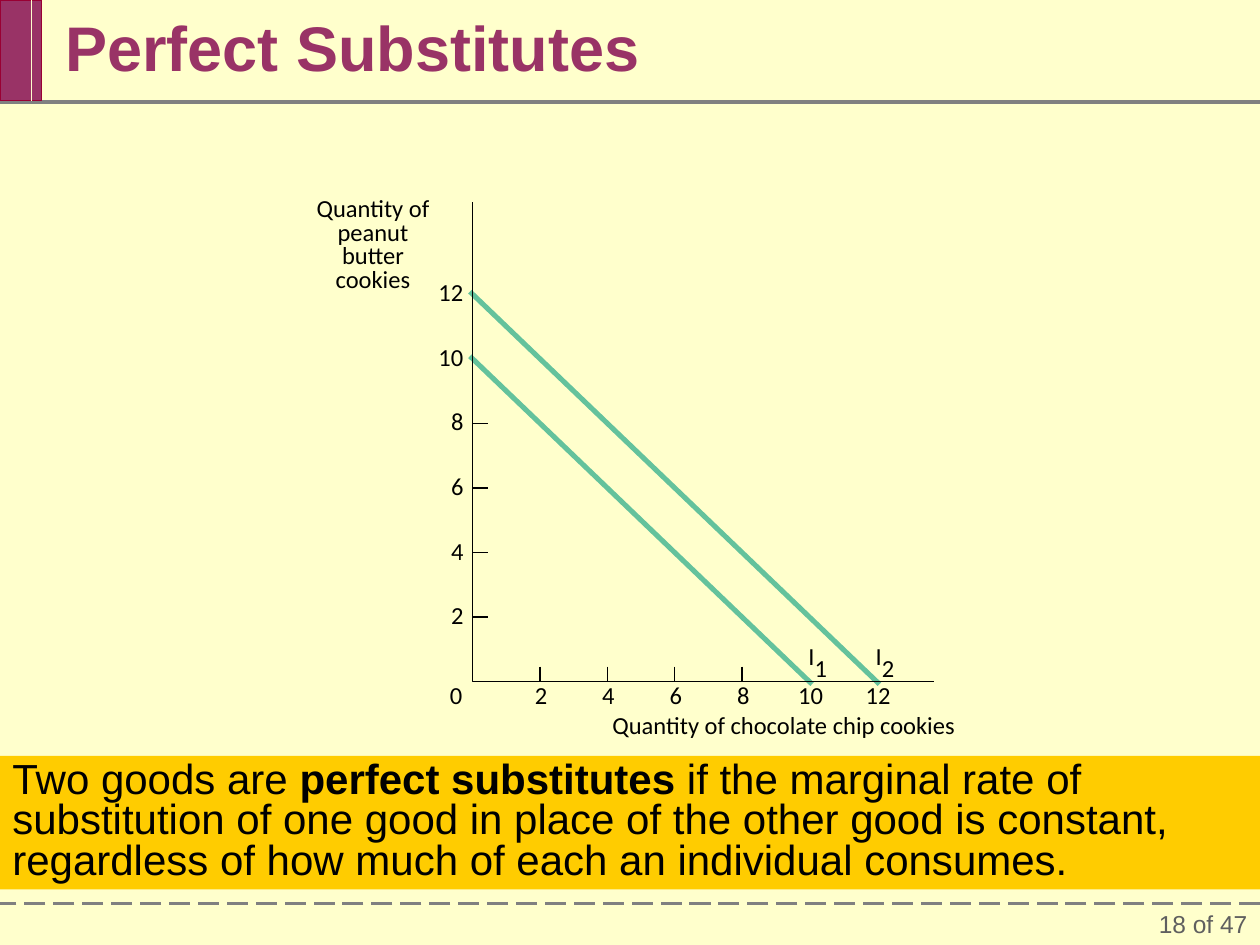
import pptx
import pptx.util
import pptx.dml.color
import pptx.enum.dml
import pptx.enum.shapes
import pptx.enum.text
import pptx.oxml.ns
import lxml.etree

TITLE = "Perfect Substitutes"
PAGE = "18 of 47"
X_TITLE = "Quantity of chocolate chip cookies"
Y_TITLE = "Quantity of peanut butter cookies"
DEFINITION = [
    ("Two goods are ", False),
    ("perfect substitutes ", True),
    ("if the marginal rate of substitution of one good in place of the other "
     "good is constant, regardless of how much of each an individual consumes.", False),
]
TICKS = [2, 4, 6, 8]
CURVES = [("I", "1", 10), ("I", "2", 12)]
COLORS = {
    "paper": "FFFFCC", "plum": "993366", "edge": "990033", "gray": "808080",
    "page": "5F5F5F", "ink": "000000", "curve": "64C29C", "band": "FFCC00",
}

W, H = 10, 7.5
X0, Y0 = 3.75, 5.41
X_END, Y_END = 7.41, 1.6
DX, DY = 2.14 / 8, 2.05 / 8
TICK = 0.12
DIGIT, LABEL_H = 0.1, 0.19
OVERHANG = 0.02

Inches, Pt = pptx.util.Inches, pptx.util.Pt
PP_ALIGN = pptx.enum.text.PP_ALIGN
ANCHOR = pptx.enum.text.MSO_ANCHOR
DASH = pptx.enum.dml.MSO_LINE

prs = pptx.Presentation()
prs.slide_width, prs.slide_height = Inches(W), Inches(H)
s = prs.slides.add_slide(prs.slide_layouts[6])


def rgb(name):
    return pptx.dml.color.RGBColor.from_string(COLORS[name])


s.background.fill.solid()
s.background.fill.fore_color.rgb = rgb("paper")


def x_at(v):
    return X0 + v * DX


def y_at(v):
    return Y0 - v * DY


def line(x1, y1, x2, y2, color="ink", width=0.75, dash=None):
    c = s.shapes.add_connector(pptx.enum.shapes.MSO_CONNECTOR.STRAIGHT,
                               Inches(x1), Inches(y1), Inches(x2), Inches(y2))
    c.line.color.rgb, c.line.width = rgb(color), Pt(width)
    if dash:
        c.line.dash_style = dash
    lxml.etree.SubElement(c._element.spPr, pptx.oxml.ns.qn("a:effectLst"))


def rect(x, y, w, h, fill, edge=None):
    sp = s.shapes.add_shape(pptx.enum.shapes.MSO_SHAPE.RECTANGLE,
                            Inches(x), Inches(y), Inches(w), Inches(h))
    sp.shadow.inherit = False
    sp.fill.solid()
    sp.fill.fore_color.rgb = rgb(fill)
    if edge:
        sp.line.color.rgb, sp.line.width = rgb(edge), Pt(0.75)
    else:
        sp.line.fill.background()
    return sp


def write(sp, runs, size, font, color="ink", align=PP_ALIGN.LEFT, spacing=None,
          anchor=ANCHOR.TOP, wrap=True):
    tf = sp.text_frame
    tf.word_wrap, tf.vertical_anchor = wrap, anchor
    p = tf.paragraphs[0]
    p.alignment, p.line_spacing = align, spacing
    p.font.size, p.font.name, p.font.color.rgb = Pt(size), font, rgb(color)
    for text, bold in runs:
        r = p.add_run()
        r.text, r.font.bold = text, bold
    return tf


def box(x, y, w, h):
    return s.shapes.add_textbox(Inches(x), Inches(y), Inches(w), Inches(h))


def label(text, x, y, w, h=LABEL_H, align=PP_ALIGN.LEFT, wrap=False):
    tf = write(box(x, y, w, h), [(text, False)], 14, "Calibri",
               align=align, spacing=0.8, wrap=wrap)
    tf.margin_left = tf.margin_right = tf.margin_top = tf.margin_bottom = 0


write(box(8.5, 7.17, 1.5, 0.33), [(PAGE, False)], 14, "Arial", "page",
      PP_ALIGN.RIGHT, anchor=ANCHOR.MIDDLE)
line(W, 7.17, 0, 7.17, "gray", 1.5, DASH.LONG_DASH)
line(W, 0.81, 0, 0.81, "gray", 2)
rect(0, 0, 0.33, 0.8, "plum", "edge")
line(0.25, 0, 0.25, 0.8, "paper")

label("0", 3.57, Y0 + 0.03, DIGIT)
for v in TICKS + [v for _, _, v in CURVES]:
    w = DIGIT * len(str(v))
    label(str(v), x_at(v) - w / 2 + 0.01, Y0 + 0.03, w)
    label(str(v), X0 - 0.07 - w, y_at(v) - 0.09, w)
for v in TICKS:
    line(x_at(v), Y0 - TICK, x_at(v), Y0)
    line(X0, y_at(v), X0 + TICK, y_at(v))

label(X_TITLE, 4.86, 5.68, 2.79)
label(Y_TITLE, 2.42, 1.58, 1.08, 0.74, PP_ALIGN.CENTER, True)

for name, sub, v in CURVES:
    line(X0 - OVERHANG, y_at(v) - OVERHANG, x_at(v) + OVERHANG, Y0 + OVERHANG,
         "curve", 2.88)
    label(name, x_at(v) - 0.01, 5.13, 0.05)
    label(sub, x_at(v) + 0.04, 5.23, DIGIT)

fb = s.shapes.build_freeform(Inches(X_END), Inches(Y0))
fb.add_line_segments([(Inches(X0), Inches(Y0)), (Inches(X0), Inches(Y_END))], close=False)
axes = fb.convert_to_shape()
axes.shadow.inherit = False
axes.fill.background()
axes.line.color.rgb, axes.line.width = rgb("ink"), Pt(0.75)

write(rect(0.42, 0.08, 8.58, 0.67, "paper"), [(TITLE, True)], 36, "Arial", "plum",
      spacing=0.85, anchor=ANCHOR.MIDDLE)
write(rect(0, 6, W, 1.06, "band"), DEFINITION, 24, "Arial", spacing=0.8)

prs.save("out.pptx")
